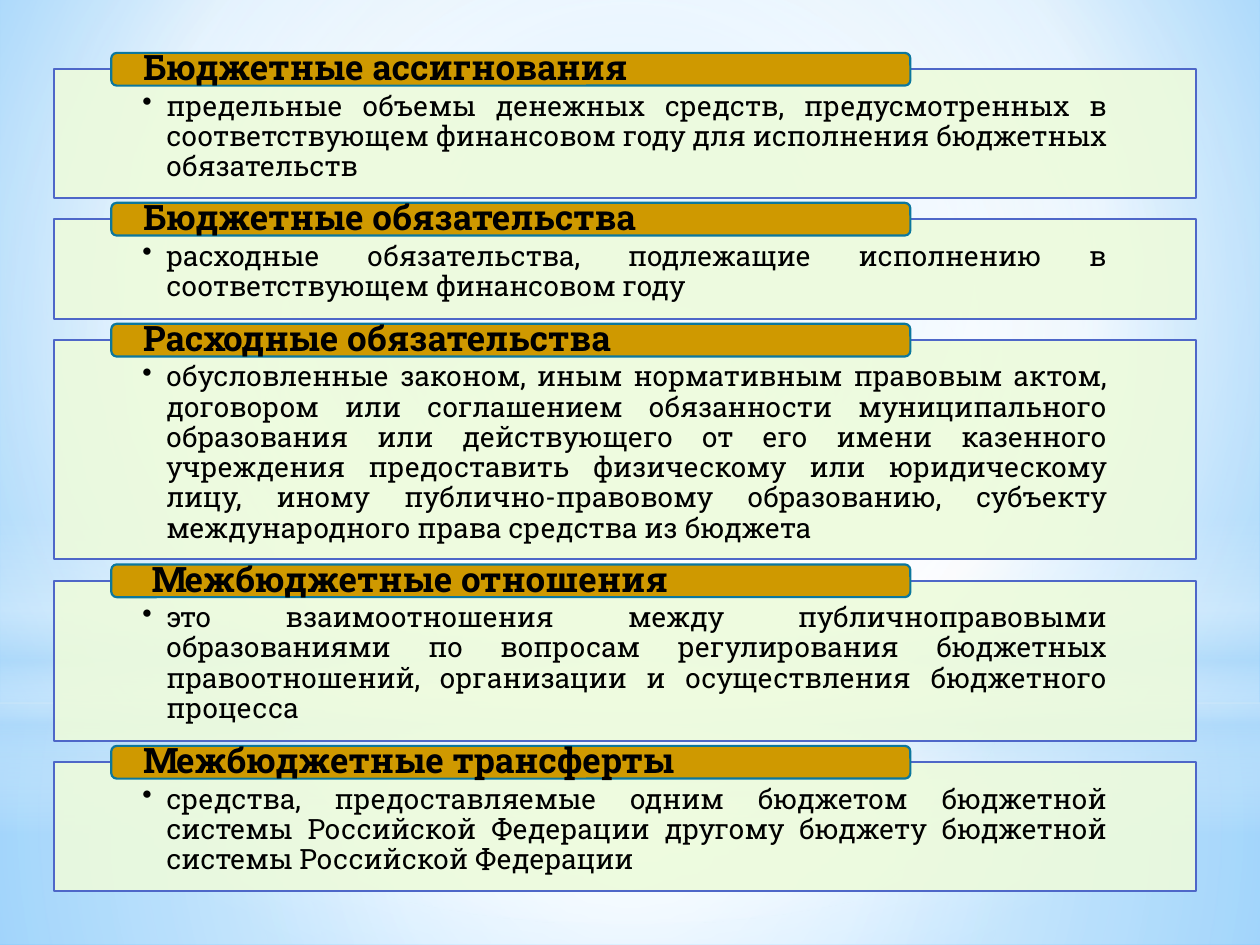
from dataclasses import dataclass

from lxml import etree
from pptx import Presentation
from pptx.dml.color import RGBColor
from pptx.enum import shapes as s, text as t
from pptx.oxml import ns
from pptx.util import Inches, Pt


@dataclass(frozen=True)
class Theme:
    font: str = "Roboto Slab"
    ink: str = "000000"
    panel: str = "EDFBDC"
    edge: str = "4E67C8"
    tab: str = "CF9900"
    rim: str = "0C779D"
    white: str = "FFFFFF"
    haze: str = "B4DCFA"
    sky: str = "9ED5FF"
    deep: str = "5BB9FF"
    head: int = 20
    body: int = 16
    line: float = 1.25


THEME = Theme()
GAP = 0.17

TERMS = [
    ("Бюджетные ассигнования", 1.02,
     "предельные объемы денежных средств, предусмотренных в соответствующем "
     "финансовом году для исполнения бюджетных обязательств"),
    ("Бюджетные обязательства", 0.79,
     "расходные обязательства, подлежащие исполнению в соответствующем "
     "финансовом году"),
    ("Расходные обязательства", 1.74,
     "обусловленные законом, иным нормативным правовым актом, договором или "
     "соглашением обязанности муниципального образования или действующего от "
     "его имени казенного учреждения предоставить физическому или юридическому "
     "лицу, иному публично-правовому образованию, субъекту международного права "
     "средства из бюджета"),
    (" Межбюджетные отношения", 1.27,
     "это взаимоотношения между публичноправовыми образованиями по вопросам "
     "регулирования бюджетных правоотношений, организации и осуществления "
     "бюджетного процесса"),
    ("Межбюджетные трансферты", 1.02,
     "средства, предоставляемые одним бюджетом бюджетной системы Российской "
     "Федерации другому бюджету бюджетной системы Российской Федерации"),
]


def add(node, tag, **attrs):
    child = etree.SubElement(node, ns.qn(tag))
    for key, val in attrs.items():
        child.set(key, str(val))
    return child


def fade(props, stops, focus=None):
    """Swap the solid fill in props for a gradient of (place, colour, opacity)."""
    grad = etree.Element(ns.qn("a:gradFill"), rotWithShape="1")
    row = add(grad, "a:gsLst")
    for place, color, alpha in stops:
        stop = add(row, "a:gs", pos=place * 1000)
        tint = add(stop, "a:srgbClr", val=color)
        if alpha < 100:
            add(tint, "a:alpha", val=alpha * 1000)
    if focus:
        ring = add(grad, "a:path", path="circle")
        add(ring, "a:fillToRect", **{k: v * 1000 for k, v in zip("ltrb", focus)})
    else:
        add(grad, "a:lin", ang=90 * 60000, scaled=0)
    solid = props.find(ns.qn("a:solidFill"))
    props.replace(solid, grad)


def block(slide, kind, box, fill, line=None):
    shape = slide.shapes.add_shape(kind, *map(Inches, box))
    shape.shadow.inherit = False
    shape.fill.solid()
    shape.fill.fore_color.rgb = RGBColor.from_string(fill)
    if line:
        shape.line.color.rgb = RGBColor.from_string(line)
        shape.line.width = Pt(THEME.line)
    else:
        shape.line.fill.background()
    return shape


def write(shape, words, *, size, bold=False, insets=(0, 0, 0, 0),
          align=t.PP_ALIGN.LEFT, anchor=t.MSO_ANCHOR.TOP, bullet=False):
    frame = shape.text_frame
    frame.word_wrap = True
    frame.vertical_anchor = anchor
    (frame.margin_left, frame.margin_top,
     frame.margin_right, frame.margin_bottom) = map(Inches, insets)
    para = frame.paragraphs[0]
    para.alignment = align
    para.line_spacing = 0.9
    run = para.add_run()
    run.text = words
    run.font.name = THEME.font
    run.font.size = Pt(size)
    run.font.bold = bold
    run.font.color.rgb = RGBColor.from_string(THEME.ink)
    if bullet:
        props = para._p.get_or_add_pPr()
        props.set("marL", str(Inches(0.19)))
        props.set("indent", str(-Inches(0.19)))
        add(props, "a:buChar", char="•")


def backdrop(slide, wide, high):
    c = THEME
    mid = (50, 50, 50, 50)
    slide.background.fill.solid()
    fade(slide.element.find(".//" + ns.qn("p:bgPr")),
         [(0, c.sky, 100), (60, c.white, 100), (100, c.deep, 100)],
         (20, 10, 20, 60))
    rect, oval = s.MSO_SHAPE.RECTANGLE, s.MSO_SHAPE.OVAL
    split = 5.58
    layers = [
        (rect, split, high - split, mid,
         [(0, c.white, 91), (37, c.white, 76), (100, c.haze, 79)]),
        (rect, 0, split, mid,
         [(0, c.white, 89), (48, c.white, 62), (100, c.haze, 79)]),
        (rect, 4.12, 2.5, None,
         [(0, c.white, 0), (29, c.white, 30), (45, c.haze, 40),
          (55, c.white, 26), (65, c.haze, 60), (100, c.white, 0)]),
        (oval, 1.75, split, mid, [(0, c.white, 100), (56, c.white, 0)]),
    ]
    for kind, top, tall, focus, stops in layers:
        shape = block(slide, kind, (0, top, wide, tall), c.white)
        fade(shape.element.spPr, stops, focus)


def card(slide, box, title, words):
    """Draw a definition panel with its title tab across the top edge."""
    left, top, wide, _ = box
    panel = block(slide, s.MSO_SHAPE.RECTANGLE, box, THEME.panel, THEME.edge)
    tint = panel.element.spPr.find(ns.qn("a:solidFill"))[0]
    add(tint, "a:alpha", val=90000)
    write(panel, words, size=THEME.body, insets=(0.7, 0.18, 0.7, 0.12),
          align=t.PP_ALIGN.JUSTIFY, bullet=True)
    tab = block(slide, s.MSO_SHAPE.ROUNDED_RECTANGLE,
                (left + wide * 0.05, top - 0.13, wide * 0.7, 0.26),
                THEME.tab, THEME.rim)
    write(tab, title, size=THEME.head, bold=True, insets=(0.24, 0, 0.24, 0),
          anchor=t.MSO_ANCHOR.MIDDLE)


def stack(slide, left, top, wide):
    for title, tall, words in TERMS:
        card(slide, (left, top, wide, tall), title, words)
        top += tall + GAP


def main():
    deck = Presentation()
    deck.slide_width, deck.slide_height = Inches(10), Inches(7.5)
    slide = deck.slides.add_slide(deck.slide_layouts[6])
    backdrop(slide, 10, 7.5)
    stack(slide, 0.43, 0.55, 9.06)
    deck.save("out.pptx")


if __name__ == "__main__":
    main()
